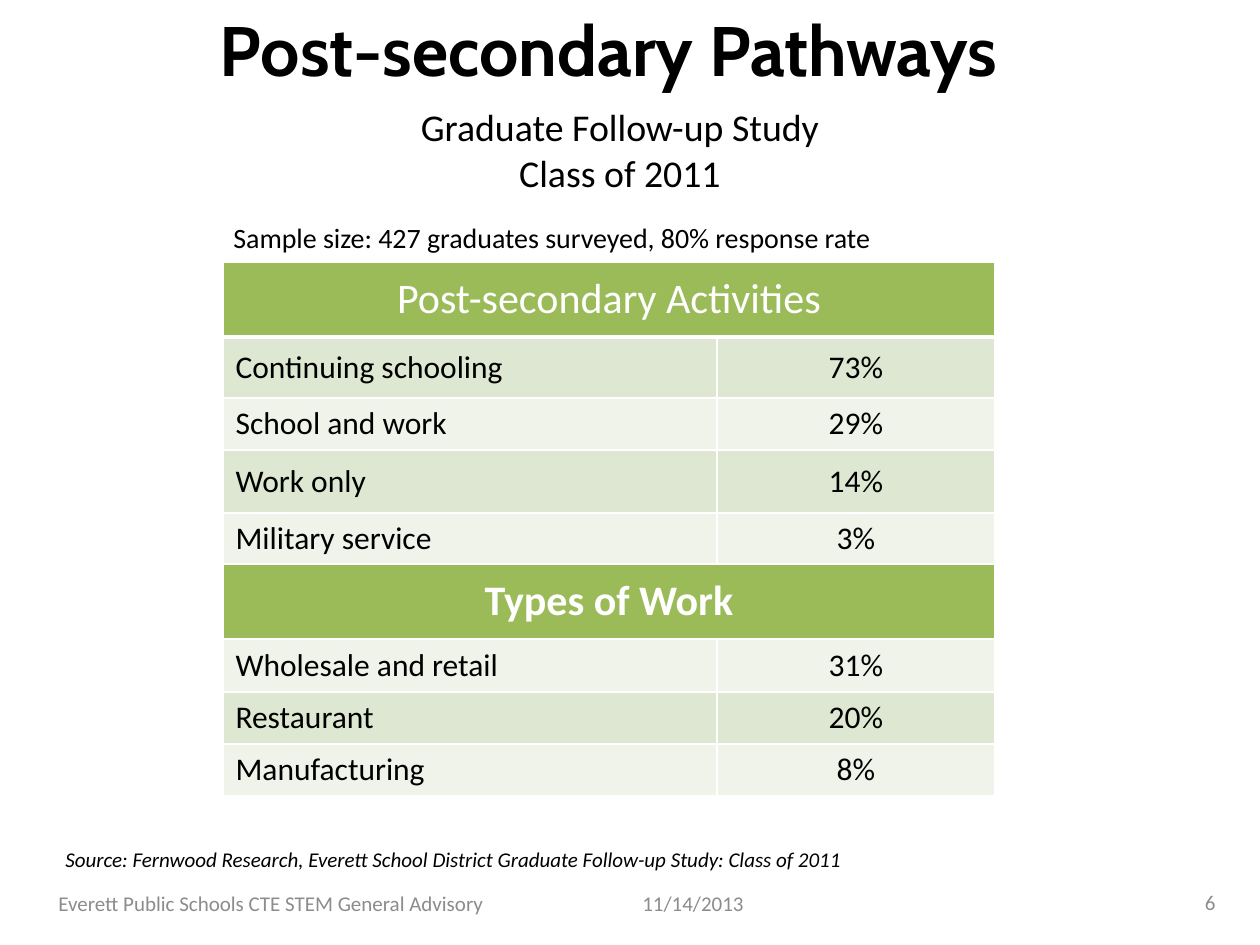
import pptx
import pptx.util
import pptx.dml.color
import pptx.enum.text
import pptx.oxml

PX = 914400 / 126
COLORS = {
    "black": "000000", "white": "FFFFFF", "gray": "8C8C8C",
    "green": "9BBB59", "dark band": "DEE7D1", "light band": "EFF3EA",
}
ALIGN = pptx.enum.text.PP_ALIGN
ANCHOR = pptx.enum.text.MSO_ANCHOR
AUTO = pptx.enum.text.MSO_AUTO_SIZE
TABLE_ROWS = [
    (75, "green", ["Post-secondary Activities"]),
    (61, "dark band", ["Continuing schooling", "73%"]),
    (52, "light band", ["School and work", "29%"]),
    (63, "dark band", ["Work only", "14%"]),
    (51, "light band", ["Military service", "3%"]),
    (75, "green", ["Types of Work"]),
    (53, "light band", ["Wholesale and retail", "31%"]),
    (52, "dark band", ["Restaurant", "20%"]),
    (52, "light band", ["Manufacturing", "8%"]),
]


def emu(pixels):
    return pptx.util.Emu(round(pixels * PX))


def rgb(name):
    return pptx.dml.color.RGBColor.from_string(COLORS[name])


def write(frame, text, size, color="black", align=ALIGN.LEFT, **styles):
    frame.text = text
    para = frame.paragraphs[0]
    para.alignment = align
    formats = {"name": "Calibri", "size": pptx.util.Pt(size), "bold": False, **styles}
    for span in para.runs:
        for name, value in formats.items():
            setattr(span.font, name, value)
        span.font.color.rgb = rgb(color)


def place(shape, bounds):
    for name, value in zip(("left", "top", "width", "height"), bounds):
        setattr(shape, name, emu(value))


def add_title(page, bounds, text):
    title = page.shapes.title
    place(title, bounds)
    write(title.text_frame, text, 21.6, align=ALIGN.CENTER)
    title.text_frame.auto_size = AUTO.NONE
    title.text_frame.vertical_anchor = ANCHOR.MIDDLE


def add_text(page, bounds, text, size, anchor=ANCHOR.TOP, wrap=True, **styles):
    box = page.shapes.add_textbox(*map(emu, bounds))
    write(box.text_frame, text, size, **styles)
    settings = {"word_wrap": wrap, "vertical_anchor": anchor, "auto_size": AUTO.NONE}
    for name, value in settings.items():
        setattr(box.text_frame, name, value)


def add_borders(cell, bottom):
    properties = cell._tc.get_or_add_tcPr()
    for side, width in {"L": 1, "R": 1, "T": 1, "B": bottom}.items():
        properties.append(pptx.oxml.parse_xml(
            f'<a:ln{side} xmlns:a="http://schemas.openxmlformats.org/drawingml/2006/main" '
            f'w="{pptx.util.Pt(width)}"><a:solidFill><a:srgbClr val="{COLORS["white"]}"/>'
            f'</a:solidFill></a:ln{side}>'))


def format_cell(cell, fill, bottom):
    add_borders(cell, bottom)
    cell.fill.solid()
    cell.fill.fore_color.rgb = rgb(fill)
    cell.vertical_anchor = ANCHOR.MIDDLE


def add_results_table(page, left, top, widths):
    heights = [height for height, _, _ in TABLE_ROWS]
    bounds = (left, top, sum(widths), sum(heights))
    table = page.shapes.add_table(len(heights), len(widths), *map(emu, bounds)).table
    table.first_row = table.horz_banding = False
    for column, width in zip(table.columns, widths):
        column.width = emu(width)
    for index, (height, fill, texts) in enumerate(TABLE_ROWS):
        row = table.rows[index]
        row.height = emu(height)
        for cell in row.cells:
            format_cell(cell, fill, 1 if index else 3)
        if len(texts) == 1:
            row.cells[0].merge(row.cells[1])
            write(row.cells[0].text_frame, texts[0], 24, "white", ALIGN.CENTER, bold=index > 0)
        else:
            for cell, text, align in zip(row.cells, texts, (ALIGN.LEFT, ALIGN.CENTER)):
                write(cell.text_frame, text, 18, align=align)


def add_footer(page, bounds, text, align):
    add_text(page, bounds, text, 12, anchor=ANCHOR.MIDDLE, color="gray", align=align)


def main():
    deck = pptx.Presentation()
    deck.slide_width, deck.slide_height = emu(1260), emu(945)
    page = deck.slides.add_slide(deck.slide_layouts[5])
    add_title(page, (53, 102, 1134, 95), "Graduate Follow-up Study\vClass of 2011")
    add_text(page, (221, 214, 756, 53),
             "Sample size: 427 graduates surveyed, 80% response rate", 16)
    add_footer(page, (630, 878, 136, 50), "11/14/2013", ALIGN.LEFT)
    add_footer(page, (10, 878, 522, 50),
               "Everett Public Schools CTE STEM General Advisory", ALIGN.CENTER)
    add_footer(page, (1068, 877, 160, 50), "6", ALIGN.RIGHT)
    add_text(page, (53, 840, 803, 38),
             "Source: Fernwood Research, Everett School District Graduate Follow-up Study: "
             "Class of 2011", 12, wrap=False, italic=True)
    add_results_table(page, 223, 262, (494, 278))
    add_text(page, (151, 0, 915, 97), "Post-secondary Pathways", 40,
             align=ALIGN.CENTER, name="Cabin", bold=True)
    deck.save("out.pptx")


if __name__ == "__main__":
    main()
